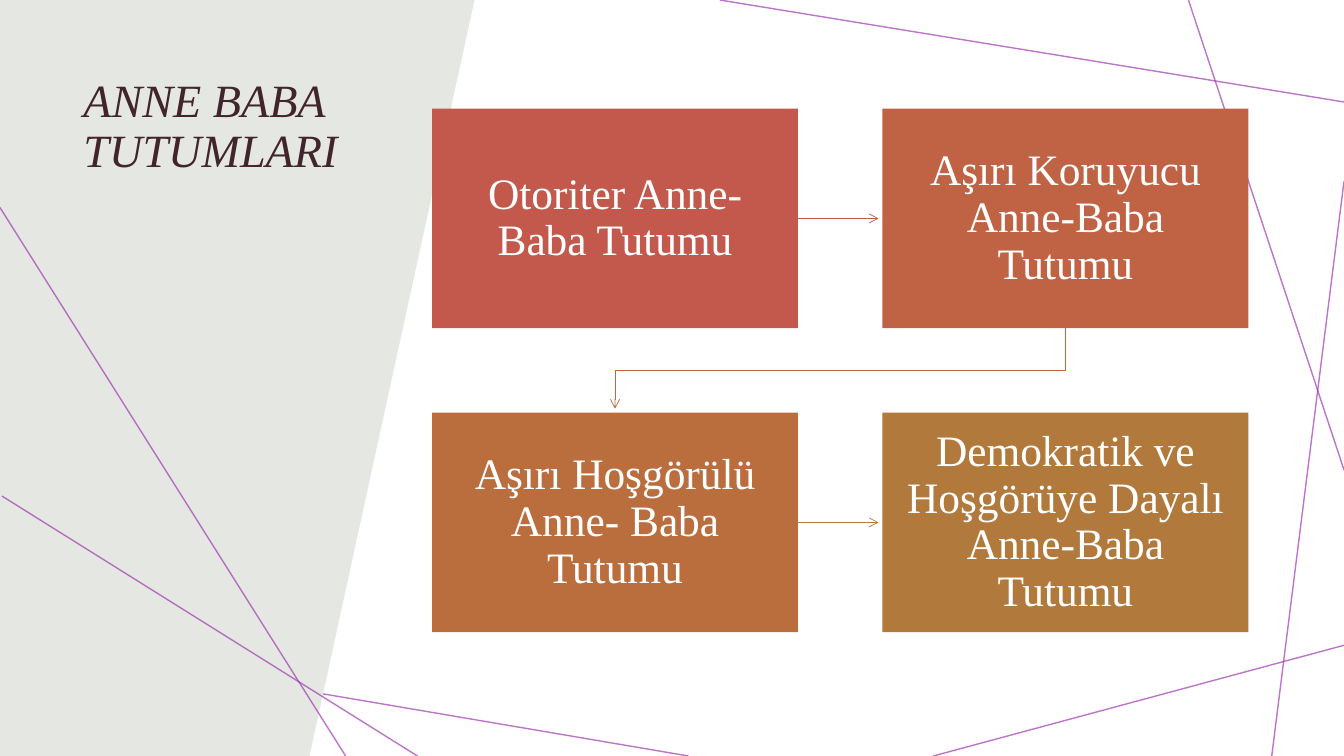
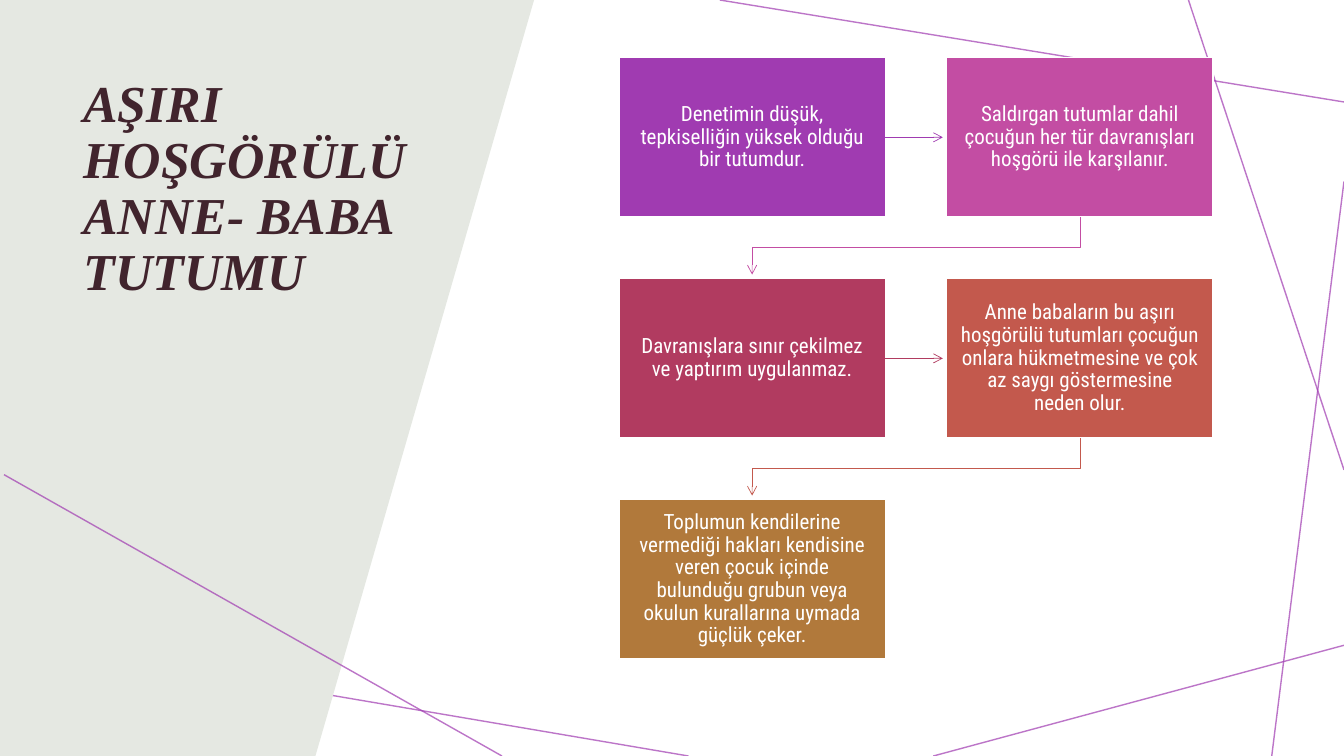
from dataclasses import dataclass

from lxml import etree
from pptx import Presentation
from pptx.dml.color import RGBColor
from pptx.enum.shapes import MSO_CONNECTOR, MSO_SHAPE
from pptx.enum.text import MSO_ANCHOR, MSO_AUTO_SIZE, PP_ALIGN
from pptx.oxml.ns import qn
from pptx.util import Cm, Pt

STRAIGHT = MSO_CONNECTOR.STRAIGHT
RECTANGLE = MSO_SHAPE.RECTANGLE
TOP, MIDDLE = MSO_ANCHOR.TOP, MSO_ANCHOR.MIDDLE
NO_FIT = MSO_AUTO_SIZE.NONE
LEFT, CENTER = PP_ALIGN.LEFT, PP_ALIGN.CENTER
WIDTH, HEIGHT = 33.87, 19.05
RIGHT_SIDE = 3
ARROW_CLEARANCE = 0.1


@dataclass(frozen=True)
class Theme:
    """Colours, fonts and type sizes of the deck."""
    panel: str = "E5E8E2"
    title: str = "41242D"
    white: str = "FFFFFF"
    purple: str = "A03BB1"
    pink: str = "C34DA3"
    crimson: str = "B13B60"
    red: str = "C3594D"
    rust: str = "C06244"
    rust_arrow: str = "BE6740"
    copper: str = "BA6E3E"
    ochre: str = "B1793B"
    serif: str = "Times New Roman"
    condensed: str = "Roboto Condensed"
    title_size: int = 33
    large_title_size: int = 37
    step_size: int = 31
    small_step_size: int = 15
    line_spacing: float = 0.9
    ray_width: float = 1
    ray_opacity: int = 70
    arrow_width: float = 0.5


@dataclass(frozen=True)
class Step:
    """One box of a flow and the colour of the arrow that leaves it."""
    text: str
    fill: str
    arrow: str = ""


@dataclass(frozen=True)
class FlowStyle:
    """Gap, text insets, font and outline of a flow."""
    gap: float
    inset_x: float
    inset_y: float
    font: str
    size: int
    outline: str = ""


THEME = Theme()
SHARED_RAYS = [
    ((17.35, HEIGHT), (0, 16.1)),
    ((WIDTH, 16.26), (23.52, HEIGHT)),
    ((WIDTH, 4.57), (32.05, HEIGHT)),
    ((WIDTH, 11.84), (29.95, 0)),
    ((WIDTH, 2.57), (18.14, 0)),
]


def rgb(color):
    """Turn a hex string into a colour."""
    return RGBColor.from_string(color)


def add_text(tf, text, font, size, color, align, bold=False, italic=False):
    """Write one formatted run in the first paragraph of a text frame."""
    p = tf.paragraphs[0]
    p.alignment = align
    p.line_spacing = THEME.line_spacing
    r = p.add_run()
    r.text = text
    r.font.name = font
    r.font.size = Pt(size)
    r.font.bold = bold
    r.font.italic = italic
    r.font.color.rgb = rgb(color)


def add_line(s, start, end, color, width):
    """Draw a straight connector without shadow."""
    cxn = s.shapes.add_connector(STRAIGHT, *(Cm(v) for v in (*start, *end)))
    cxn.line.color.rgb = rgb(color)
    cxn.line.width = Pt(width)
    etree.SubElement(cxn.element.spPr, qn("a:effectLst"))
    return cxn


def add_ray(s, start, end):
    """Draw a translucent decorative line."""
    cxn = add_line(s, start, end, THEME.purple, THEME.ray_width)
    color = cxn.element.spPr.find(".//" + qn("a:srgbClr"))
    etree.SubElement(color, qn("a:alpha"), val=str(THEME.ray_opacity * 1000))
    return cxn


def add_arrowhead(sp):
    """Put an open arrowhead at the end of a line."""
    ln = sp.element.spPr.find(qn("a:ln"))
    etree.SubElement(ln, qn("a:tailEnd"), type="arrow")


def add_polygon(s, points, close):
    """Draw a freeform through points given in centimetres."""
    (x, y), *rest = [(Cm(px), Cm(py)) for px, py in points]
    builder = s.shapes.build_freeform(x, y)
    builder.add_line_segments(rest, close=close)
    sp = builder.convert_to_shape()
    sp.shadow.inherit = False
    return sp


def add_panel(s, top_width, bottom_width):
    """Place the slanted panel behind everything else on the slide."""
    sp = add_polygon(s, [(bottom_width, HEIGHT), (0, HEIGHT), (0, 0), (top_width, 0)], True)
    sp.fill.solid()
    sp.fill.fore_color.rgb = rgb(THEME.panel)
    sp.line.fill.background()
    s.shapes.element.insert(2, sp.element)


def add_title(s, box, text, size, bold=False):
    """Move and fill the title placeholder."""
    sp = s.shapes.title
    sp.left, sp.top, sp.width, sp.height = (Cm(v) for v in box)
    tf = sp.text_frame
    tf.word_wrap = True
    tf.auto_size = NO_FIT
    tf.vertical_anchor = TOP
    add_text(tf, text, THEME.serif, size, THEME.title, LEFT, bold, True)


def add_step(s, box, step, style):
    """Draw one box of a flow."""
    sp = s.shapes.add_shape(RECTANGLE, *(Cm(v) for v in box))
    sp.shadow.inherit = False
    sp.fill.solid()
    sp.fill.fore_color.rgb = rgb(step.fill)
    if style.outline:
        sp.line.color.rgb = rgb(style.outline)
        sp.line.width = Pt(1)
    else:
        sp.line.fill.background()
    tf = sp.text_frame
    tf.word_wrap = True
    tf.vertical_anchor = MIDDLE
    tf.margin_left = tf.margin_right = Cm(style.inset_x)
    tf.margin_top = tf.margin_bottom = Cm(style.inset_y)
    add_text(tf, step.text, style.font, style.size, THEME.white, CENTER)
    return sp


def add_across_arrow(s, sp, box, gap, color):
    """Draw the arrow from a box to the next one in its row."""
    x, y, w, h = box
    start = (x + w, y + h / 2)
    end = (x + w + gap - ARROW_CLEARANCE, y + h / 2)
    cxn = add_line(s, start, end, color, THEME.arrow_width)
    cxn.begin_connect(sp, RIGHT_SIDE)
    add_arrowhead(cxn)


def add_return_arrow(s, box, left, gap, color):
    """Draw the bent arrow from the end of a row to the start of the next."""
    x, y, w, h = box
    start_x, end_x, bottom = x + w / 2, left + w / 2, y + h
    bend = bottom + gap / 2
    points = [(start_x, bottom), (start_x, bend), (end_x, bend),
              (end_x, bottom + gap - ARROW_CLEARANCE)]
    sp = add_polygon(s, points, False)
    sp.fill.background()
    sp.line.color.rgb = rgb(color)
    sp.line.width = Pt(THEME.arrow_width)
    add_arrowhead(sp)


def add_flow(s, box, steps, style, cols=2):
    """Lay out steps row by row in the box and link each to the next."""
    left, top, width, height = box
    rows = -(-len(steps) // cols)
    gap = style.gap
    w = (width - gap * (cols - 1)) / cols
    h = (height - gap * (rows - 1)) / rows
    for i, step in enumerate(steps):
        row, col = divmod(i, cols)
        cell = (left + col * (w + gap), top + row * (h + gap), w, h)
        sp = add_step(s, cell, step, style)
        if not step.arrow:
            continue
        if col < cols - 1:
            add_across_arrow(s, sp, cell, gap, step.arrow)
        else:
            add_return_arrow(s, cell, left, gap, step.arrow)


def add_shared_rays(s, layout):
    """Put the lines that all slides share on the layout."""
    for start, end in SHARED_RAYS:
        layout.shapes.element.append(add_ray(s, start, end).element)


def build_attitudes(s):
    """Build the overview of parental attitudes."""
    add_panel(s, 11.96, 7.8)
    add_title(s, (1.85, 1.83, 8.23, 8.1), "ANNE BABA TUTUMLARI", THEME.title_size)
    add_ray(s, (10.52, HEIGHT), (0.05, 12.5))
    add_ray(s, (0, 5.23), (8.71, HEIGHT))
    steps = [
        Step("Otoriter Anne- Baba Tutumu", THEME.red, THEME.red),
        Step("Aşırı Koruyucu Anne-Baba Tutumu", THEME.rust, THEME.rust_arrow),
        Step("Aşırı Hoşgörülü Anne- Baba Tutumu", THEME.copper, THEME.ochre),
        Step("Demokratik ve Hoşgörüye Dayalı Anne-Baba Tutumu", THEME.ochre),
    ]
    style = FlowStyle(2.13, 0.46, 0.48, THEME.serif, THEME.step_size)
    add_flow(s, (10.89, 2.74, 20.57, 13.19), steps, style)


def build_permissive(s):
    """Build the slide on the permissive attitude."""
    add_panel(s, 13.46, 7.95)
    add_title(s, (1.85, 1.83, 8.97, 9.91), "AŞIRI HOŞGÖRÜLÜ ANNE- BABA TUTUMU",
              THEME.large_title_size, True)
    add_ray(s, (0.1, 11.96), (12.65, HEIGHT))
    steps = [
        Step("Denetimin düşük, tepkiselliğin yüksek olduğu bir tutumdur.",
             THEME.purple, THEME.purple),
        Step("Saldırgan tutumlar dahil çocuğun her tür davranışları hoşgörü ile karşılanır.",
             THEME.pink, THEME.pink),
        Step("Davranışlara sınır çekilmez ve yaptırım uygulanmaz.",
             THEME.crimson, THEME.crimson),
        Step("Anne babaların bu aşırı hoşgörülü tutumları çocuğun onlara hükmetmesine "
             "ve çok az saygı göstermesine neden olur.", THEME.red, THEME.red),
        Step("Toplumun kendilerine vermediği hakları kendisine veren çocuk içinde bulunduğu "
             "grubun veya okulun kurallarına uymada güçlük çeker.", THEME.ochre),
    ]
    style = FlowStyle(1.55, 0.33, 0.36, THEME.condensed, THEME.small_step_size, THEME.white)
    add_flow(s, (15.6, 1.45, 14.97, 15.16), steps, style)


def main():
    """Build and save the deck."""
    prs = Presentation()
    prs.slide_width, prs.slide_height = Cm(WIDTH), Cm(HEIGHT)
    layout = prs.slide_layouts.get_by_name("Title Only")
    slides = [prs.slides.add_slide(layout) for _ in range(2)]
    add_shared_rays(slides[0], layout)
    build_attitudes(slides[0])
    build_permissive(slides[1])
    prs.save("out.pptx")


if __name__ == "__main__":
    main()
